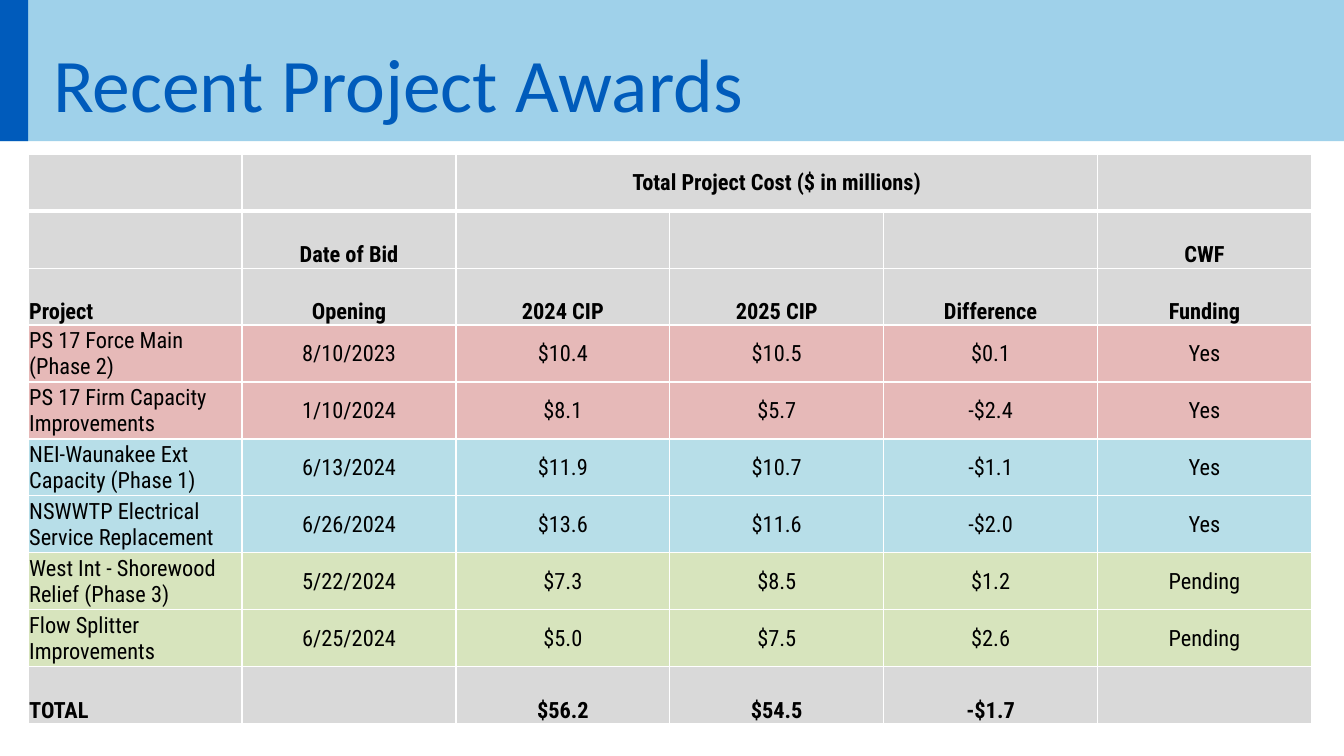
from dataclasses import dataclass

from lxml import etree
from pptx import Presentation
from pptx.dml.color import RGBColor
from pptx.enum import shapes, text
from pptx.oxml import ns
from pptx.util import Pt


@dataclass(frozen=True)
class Theme:
    navy: str = "005BBB"
    sky: str = "8FCAE7"
    white: str = "FFFFFF"
    black: str = "000000"
    gray: str = "D9D9D9"
    rose: str = "E6B9B8"
    aqua: str = "B7DEE8"
    lime: str = "D7E4BD"
    title_font: str = "Calibri"
    table_font: str = "Roboto Condensed"
    title_size: float = 54
    table_size: float = 16
    thin: float = 1
    thick: float = 3


@dataclass(frozen=True)
class Band:
    left: float
    width: float
    color: str
    opacity: int = 100


@dataclass(frozen=True)
class AwardRow:
    values: tuple[str, ...]
    color: str
    bold: bool = False
    anchor: text.MSO_ANCHOR = text.MSO_ANCHOR.MIDDLE


THEME = Theme()
SLIDE_WIDTH, SLIDE_HEIGHT, BAND_HEIGHT = 960, 540, 100.8
TABLE_LEFT, TABLE_TOP = 20.16, 110.16
COLUMN_WIDTH, ROW_HEIGHT = 152.76, 40.68

BANDS = (
    Band(0, SLIDE_WIDTH, THEME.sky, 85),
    Band(0, TABLE_LEFT, THEME.navy),
)


def summary(*values: str, anchor: text.MSO_ANCHOR = text.MSO_ANCHOR.BOTTOM) -> AwardRow:
    """Describe a bold gray row."""
    return AwardRow(values, THEME.gray, True, anchor)


ROWS = (
    summary("", "", "Total Project Cost ($ in millions)", "", "", "",
            anchor=text.MSO_ANCHOR.MIDDLE),
    summary("", "Date of Bid", "", "", "", "CWF"),
    summary("Project", "Opening", "2024 CIP", "2025 CIP", "Difference", "Funding"),
    AwardRow(("PS 17 Force Main (Phase 2)", "8/10/2023", "$10.4", "$10.5", "$0.1", "Yes"),
             THEME.rose),
    AwardRow(("PS 17 Firm Capacity Improvements", "1/10/2024", "$8.1", "$5.7", "-$2.4", "Yes"),
             THEME.rose),
    AwardRow(("NEI-Waunakee Ext Capacity (Phase 1)", "6/13/2024", "$11.9", "$10.7", "-$1.1", "Yes"),
             THEME.aqua),
    AwardRow(("NSWWTP Electrical Service Replacement", "6/26/2024", "$13.6", "$11.6", "-$2.0", "Yes"),
             THEME.aqua),
    AwardRow(("West Int - Shorewood Relief (Phase 3)", "5/22/2024", "$7.3", "$8.5", "$1.2", "Pending"),
             THEME.lime),
    AwardRow(("Flow Splitter Improvements", "6/25/2024", "$5.0", "$7.5", "$2.6", "Pending"),
             THEME.lime),
    summary("TOTAL", "", "$56.2", "$54.5", "-$1.7", ""),
)


def write(frame, content: str, *, font: str, size: float, color: str,
          bold: bool = False, align: text.PP_ALIGN = text.PP_ALIGN.LEFT) -> None:
    """Put one formatted paragraph into a text frame."""
    para = frame.paragraphs[0]
    para.alignment = align
    span = para.add_run()
    span.text = content
    span.font.name = font
    span.font.size = Pt(size)
    span.font.bold = bold
    span.font.color.rgb = RGBColor.from_string(color)


def draw_band(page, band: Band) -> None:
    """Draw one rectangle of the title banner."""
    box = page.shapes.add_shape(shapes.MSO_SHAPE.RECTANGLE, Pt(band.left), Pt(0),
                                Pt(band.width), Pt(BAND_HEIGHT))
    box.shadow.inherit = False
    box.line.fill.background()
    box.fill.solid()
    box.fill.fore_color.rgb = RGBColor.from_string(band.color)
    if band.opacity < 100:
        color = box.fill._xPr.find(".//" + ns.qn("a:srgbClr"))
        etree.SubElement(color, ns.qn("a:alpha"), val=str(band.opacity * 1000))


def draw_title(page) -> None:
    """Write the slide title over the banner."""
    box = page.shapes.add_textbox(Pt(30.96), Pt(23.04), Pt(688.32), Pt(87.12))
    box.text_frame.word_wrap = True
    write(box.text_frame, "Recent Project Awards", font=THEME.title_font,
          size=THEME.title_size, color=THEME.navy)


def set_borders(cell, top: float, bottom: float) -> None:
    """Outline a cell in white, ahead of its fill."""
    properties = cell._tc.get_or_add_tcPr()
    widths = {"lnL": THEME.thin, "lnR": THEME.thin, "lnT": top, "lnB": bottom}
    for position, (side, width) in enumerate(widths.items()):
        line = etree.Element(ns.qn("a:" + side), w=str(Pt(width)))
        paint = etree.SubElement(line, ns.qn("a:solidFill"))
        etree.SubElement(paint, ns.qn("a:srgbClr"), val=THEME.white)
        properties.insert(position, line)


def fill_cell(cell, row: AwardRow, row_index: int, column: int) -> None:
    """Style one table cell and write its value."""
    cell.fill.solid()
    cell.fill.fore_color.rgb = RGBColor.from_string(row.color)
    set_borders(cell, THEME.thick if row_index == 1 else THEME.thin,
                THEME.thick if row_index == 0 else THEME.thin)
    content = row.values[column]
    if not content:
        return
    cell.vertical_anchor = row.anchor
    if row_index:
        cell.margin_left = cell.margin_right = cell.margin_top = Pt(0.72)
        cell.margin_bottom = Pt(0)
    write(cell.text_frame, content, font=THEME.table_font, size=THEME.table_size,
          color=THEME.black, bold=row.bold,
          align=text.PP_ALIGN.CENTER if column else text.PP_ALIGN.LEFT)


def draw_table(page) -> None:
    """Draw the table of project awards."""
    columns = len(ROWS[0].values)
    table = page.shapes.add_table(len(ROWS), columns, Pt(TABLE_LEFT), Pt(TABLE_TOP),
                                  Pt(COLUMN_WIDTH * columns),
                                  Pt(ROW_HEIGHT * len(ROWS))).table
    table.horz_banding = False
    for column in table.columns:
        column.width = Pt(COLUMN_WIDTH)
    for row_index, row in enumerate(ROWS):
        table.rows[row_index].height = Pt(ROW_HEIGHT)
        for column in range(columns):
            fill_cell(table.cell(row_index, column), row, row_index, column)
    table.cell(0, 2).merge(table.cell(0, 4))


def main() -> None:
    """Build and save the deck."""
    deck = Presentation()
    deck.slide_width, deck.slide_height = Pt(SLIDE_WIDTH), Pt(SLIDE_HEIGHT)
    page = deck.slides.add_slide(deck.slide_layouts[6])
    for band in BANDS:
        draw_band(page, band)
    draw_title(page)
    draw_table(page)
    deck.save("out.pptx")


if __name__ == "__main__":
    main()
